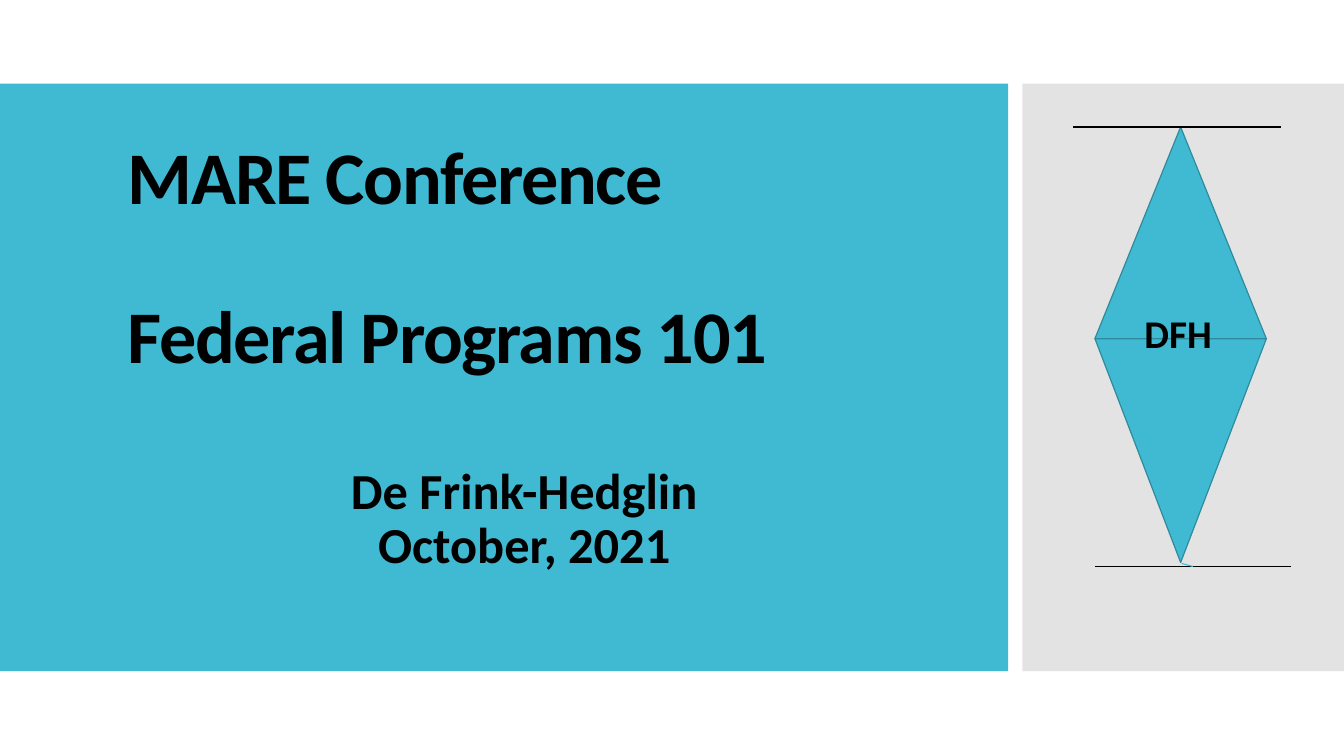
import pptx
import pptx.util
import pptx.dml.color
import pptx.enum.shapes
import pptx.enum.text
import pptx.oxml.ns
import lxml.etree

Inches, Pt = pptx.util.Inches, pptx.util.Pt
RGBColor = pptx.dml.color.RGBColor
MSO_SHAPE = pptx.enum.shapes.MSO_SHAPE
PP_ALIGN = pptx.enum.text.PP_ALIGN
MSO_ANCHOR = pptx.enum.text.MSO_ANCHOR
qn = pptx.oxml.ns.qn

TEAL = RGBColor(0x40, 0xBA, 0xD2)
DARK_TEAL = RGBColor(0x2F, 0x8A, 0x9B)
GREY = RGBColor(0xC8, 0xC8, 0xC8)
BLACK = RGBColor(0, 0, 0)


def add_filled(slide, kind, x, y, w, h, fill, line=None, alpha=None):
    sp = slide.shapes.add_shape(kind, Inches(x), Inches(y), Inches(w), Inches(h))
    sp.shadow.inherit = False
    sp.fill.solid()
    sp.fill.fore_color.rgb = fill
    if alpha is not None:
        clr = sp.fill._xPr.find(".//" + qn("a:srgbClr"))
        lxml.etree.SubElement(clr, qn("a:alpha"), val=str(alpha * 1000))
    if line is None:
        sp.line.fill.background()
    else:
        sp.line.color.rgb = line
        sp.line.width = Pt(0.85)
    return sp


def add_text(slide, x, y, w, h, lines, size, align=PP_ALIGN.LEFT,
             line_spacing=1.0, gap=0, tracking=0):
    sp = slide.shapes.add_textbox(Inches(x), Inches(y), Inches(w), Inches(h))
    tf = sp.text_frame
    tf.word_wrap = True
    tf.text = "\n".join(lines)
    for i, p in enumerate(tf.paragraphs):
        p.alignment = align
        p.line_spacing = line_spacing
        p.space_before = Pt(gap if i else 0)
        for r in p.runs:
            r.font.size = Pt(size)
            r.font.name = "Calibri"
            r.font.bold = True
            r.font.color.rgb = BLACK
            if tracking:
                r.font._element.set("spc", str(tracking * 100))
    return tf


def add_line(slide, x1, y1, x2, y2, color):
    cn = slide.shapes.add_connector(
        pptx.enum.shapes.MSO_CONNECTOR.STRAIGHT,
        Inches(x1), Inches(y1), Inches(x2), Inches(y2))
    cn.line.color.rgb = color
    cn.line.width = Pt(0.75)
    lxml.etree.SubElement(cn._element.spPr, qn("a:effectLst"))


def main():
    prs = pptx.Presentation()
    prs.slide_width, prs.slide_height = Inches(13.33), Inches(7.5)
    slide = prs.slides.add_slide(prs.slide_layouts[6])

    # Background panels
    add_filled(slide, MSO_SHAPE.RECTANGLE, 0, 0.83, 10, 5.83, TEAL)
    add_filled(slide, MSO_SHAPE.RECTANGLE, 10.14, 0.83, 3.19, 5.83, GREY, alpha=50)

    # Title and presenter
    tf = add_text(slide, 1.17, 1.42, 8, 3.21,
                  ["MARE Conference", "Federal Programs 101"], 53,
                  line_spacing=0.9, gap=57, tracking=-1)
    tf.vertical_anchor = MSO_ANCHOR.BOTTOM
    tf.margin_bottom = Inches(0.86)
    add_text(slide, 1.2, 4.57, 8, 1.53, ["De Frink-Hedglin", "October, 2021"], 36,
             align=PP_ALIGN.CENTER, line_spacing=0.9)

    # Diamond emblem
    add_filled(slide, MSO_SHAPE.FLOWCHART_EXTRACT, 10.86, 1.26, 1.7, 2.1, TEAL, DARK_TEAL)
    lower = add_filled(slide, MSO_SHAPE.ISOSCELES_TRIANGLE, 10.86, 3.36, 1.7, 2.22,
                       TEAL, DARK_TEAL)
    lower.rotation = 180
    tf = add_text(slide, 11.16, 3.02, 1.08, 0.57, ["DFH"], 28)
    tf.margin_left = Inches(0.19)

    # Lines above and below the diamond
    add_line(slide, 10.64, 1.26, 12.71, 1.26, BLACK)
    add_line(slide, 12.8, 5.62, 10.86, 5.62, BLACK)
    add_line(slide, 11.83, 5.62, 11.72, 5.59, TEAL)

    prs.save("out.pptx")


if __name__ == "__main__":
    main()
